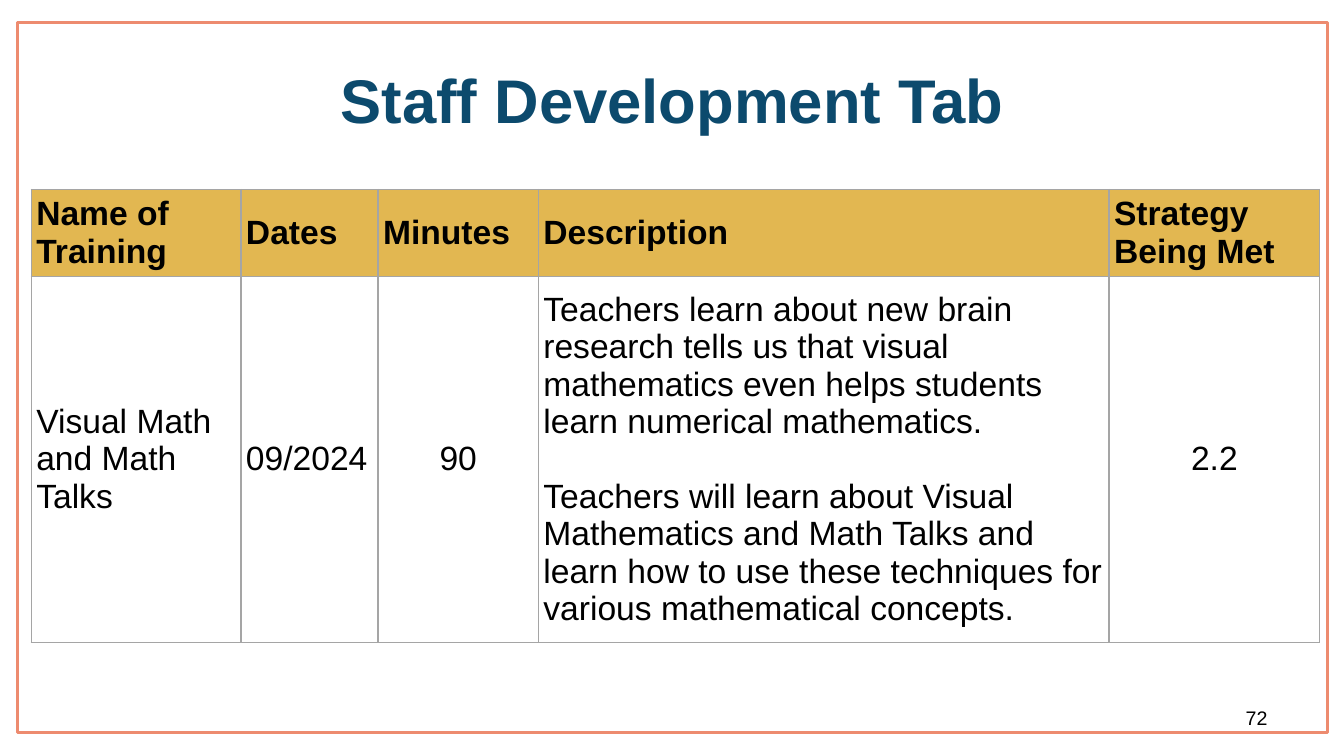
from lxml.etree import SubElement as Sub
from pptx import Presentation
from pptx.dml.color import RGBColor
from pptx.enum.shapes import MSO_SHAPE as Kind
from pptx.enum.text import MSO_ANCHOR as Anchor, PP_ALIGN as Align
from pptx.oxml.ns import qn
from pptx.util import Inches, Pt


def color(code):
    return RGBColor.from_string(code)


class Deck:
    """Holds the style and the current slide and draws each kind of element."""

    font = "Arial"
    ink = "000000"
    navy = "0C4A6D"
    coral = "ED8B6F"
    gold = "E2B751"
    gray = "A5A5A5"

    def __init__(self):
        self.show = Presentation()
        self.show.slide_width = Inches(13.33)
        self.show.slide_height = Inches(7.5)
        self.slide = self.show.slides.add_slide(self.show.slide_layouts[6])

    def style(self, frame, size, code, bold=False, align=Align.LEFT):
        for para in frame.paragraphs:
            para.alignment = align
            for run in para.runs:
                run.font.name = self.font
                run.font.size = Pt(size)
                run.font.bold = bold
                run.font.color.rgb = color(code)

    def frame(self, *box):
        shape = self.slide.shapes.add_shape(Kind.RECTANGLE, *map(Inches, box))
        shape.shadow.inherit = False
        shape.fill.background()
        shape.line.color.rgb = color(self.coral)
        shape.line.width = Pt(2)

    def text(self, words, box, size, code, align, bold=False, anchor=Anchor.TOP):
        frame = self.slide.shapes.add_textbox(*map(Inches, box)).text_frame
        frame.word_wrap = True
        frame.vertical_anchor = anchor
        frame.text = words
        self.style(frame, size, code, bold, align)
        return frame

    def border(self, cell):
        props = cell._tc.get_or_add_tcPr()
        for spot, side in enumerate(("lnL", "lnR", "lnT", "lnB")):
            line = props.makeelement(qn(f"a:{side}"), {"w": str(Pt(1))})
            fill = Sub(line, qn("a:solidFill"))
            Sub(fill, qn("a:srgbClr"), val=self.gray)
            props.insert(spot, line)

    def cell(self, cell, words, head, align):
        cell.margin_left = cell.margin_right = Inches(0.05)
        cell.margin_top = cell.margin_bottom = Inches(0.03)
        cell.vertical_anchor = Anchor.MIDDLE
        if head:
            cell.fill.solid()
            cell.fill.fore_color.rgb = color(self.gold)
        else:
            cell.fill.background()
        cell.text_frame.text = words
        self.style(cell.text_frame, 24, self.ink, head, align)
        for para in cell.text_frame.paragraphs[1:]:
            para.space_before = Pt(26.8)
        self.border(cell)

    def table(self, left, top, wides, highs, rows, mid):
        size = left, top, sum(wides), sum(highs)
        table = self.slide.shapes.add_table(
            len(rows), len(wides), *map(Inches, size)).table
        for col, wide in zip(table.columns, wides):
            col.width = Inches(wide)
        for row, high in zip(table.rows, highs):
            row.height = Inches(high)
        for r, row in enumerate(rows):
            for c, words in enumerate(row):
                align = Align.CENTER if r and c in mid else Align.LEFT
                self.cell(table.cell(r, c), words, r == 0, align)


def main():
    deck = Deck()
    deck.frame(0.17, 0.22, 13, 7.05)
    title = deck.text("Staff Development Tab", (0.17, 0.3, 13, 1.45), 44,
                      deck.navy, Align.CENTER, True, Anchor.MIDDLE)
    title.paragraphs[0].line_spacing = 0.9
    deck.text("72", (9.56, 6.95, 3.11, 0.4), 14, deck.ink, Align.RIGHT)
    about = (
        "Teachers learn about new brain research tells us that visual "
        "mathematics even helps students learn numerical mathematics.\n"
        "Teachers will learn about Visual Mathematics and Math Talks and "
        "learn how to use these techniques for various mathematical concepts."
    )
    rows = [
        ["Name of Training", "Dates", "Minutes", "Description",
         "Strategy Being Met"],
        ["Visual Math and Math Talks", "09/2024", "90", about, "2.2"],
    ]
    deck.table(0.31, 1.88, [2.08, 1.36, 1.59, 5.66, 2.09], [0.84, 3.6],
               rows, mid={2, 4})
    deck.show.save("out.pptx")


if __name__ == "__main__":
    main()
